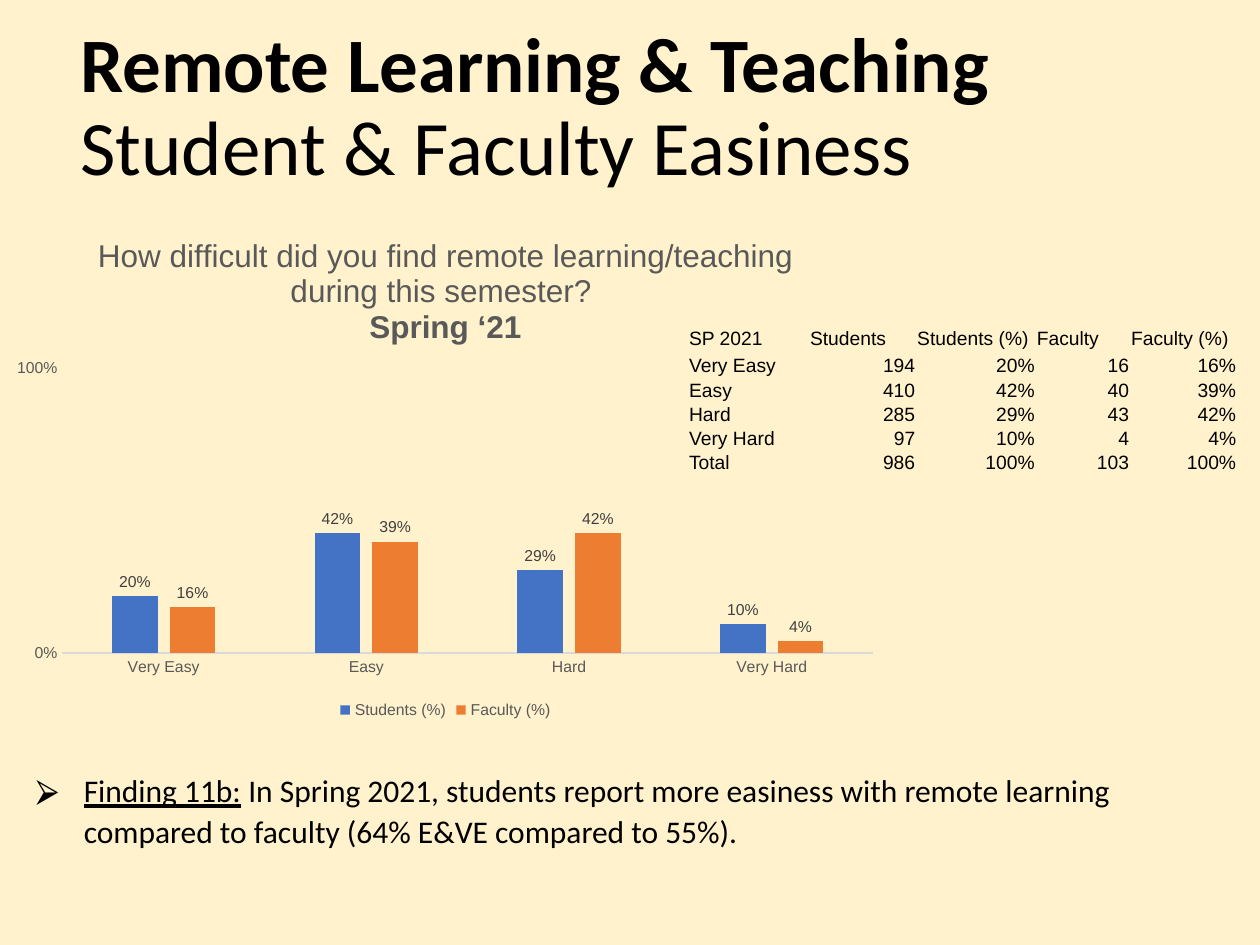
from lxml import etree
from pptx import Presentation
from pptx import util as u
from pptx.chart.data import CategoryChartData
from pptx.dml.color import RGBColor
from pptx.enum import chart as charts, text
from pptx.oxml import parse_xml
from pptx.oxml.ns import nsdecls, qn

CREAM = RGBColor(0xFF, 0xF2, 0xCC)
BLACK = RGBColor(0, 0, 0)
GREY = RGBColor(0x59, 0x59, 0x59)
DARK_GREY = RGBColor(0x40, 0x40, 0x40)
LIGHT_GREY = RGBColor(0xD9, 0xD9, 0xD9)
BLUE = RGBColor(0x44, 0x72, 0xC4)
ORANGE = RGBColor(0xED, 0x7D, 0x31)
NO_STYLE = "{2D5ABB26-0587-4C30-8999-92F81FD0307C}"


def style_font(font, name, size, color):
    font.name = name
    font.size = u.Pt(size)
    font.color.rgb = color


def add_text(left, top, width, height, line_spacing):
    text_frame = slide.shapes.add_textbox(
        u.Cm(left), u.Cm(top), u.Cm(width), u.Cm(height)).text_frame
    text_frame.word_wrap = True
    text_frame.paragraphs[0].line_spacing = line_spacing
    return text_frame


presentation = Presentation()
presentation.slide_width = u.Cm(25.4)
presentation.slide_height = u.Cm(19.05)
slide = presentation.slides.add_slide(presentation.slide_layouts[6])
slide.background.fill.solid()
slide.background.fill.fore_color.rgb = CREAM

finding = add_text(0.48, 15.37, 24.43, 3.28, 1.07)
paragraph = finding.paragraphs[0]
paragraph.text = "Finding 11b:"
paragraph.add_run().text = (
    " In Spring 2021, students report more easiness with remote learning "
    "compared to faculty (64% E&VE compared to 55%).")
for run in paragraph.runs:
    style_font(run.font, "Calibri", 18, BLACK)
paragraph.runs[0].font.underline = True
properties = paragraph._p.get_or_add_pPr()
properties.set("marL", str(u.Cm(0.96)))
properties.set("indent", str(-u.Cm(0.96)))
bullet_color = etree.SubElement(properties, qn("a:buClr"))
etree.SubElement(bullet_color, qn("a:srgbClr"), val=str(BLACK))
etree.SubElement(properties, qn("a:buFont"), typeface="Arial")
etree.SubElement(properties, qn("a:buChar"), char="⮚")

title = add_text(1.37, 0.36, 21.89, 3.68, 0.9)
title.vertical_anchor = text.MSO_ANCHOR.MIDDLE
paragraph = title.paragraphs[0]
paragraph.text = "Remote Learning & Teaching\vStudent & Faculty Easiness"
for run in paragraph.runs:
    style_font(run.font, "Calibri", 44, BLACK)
paragraph.runs[0].font.bold = True

data = CategoryChartData(number_format="0%")
data.categories = ["Very Easy", "Easy", "Hard", "Very Hard"]
data.add_series("Students (%)", [0.2, 0.42, 0.29, 0.1])
data.add_series("Faculty (%)", [0.16, 0.39, 0.42, 0.04])
chart = slide.shapes.add_chart(
    charts.XL_CHART_TYPE.COLUMN_CLUSTERED,
    u.Cm(0), u.Cm(4.34), u.Cm(17.96), u.Cm(10.26), data).chart
style_font(chart.font, "Arial", 10, BLACK)

chart_title = chart.chart_title.text_frame
chart_title.text = ("How difficult did you find remote learning/teaching "
                    "during this semester? \nSpring ‘21")
for paragraph, bold in zip(chart_title.paragraphs, (False, True)):
    style_font(paragraph.runs[0].font, "Arial", 18, GREY)
    paragraph.runs[0].font.bold = bold
chart.chart_title.include_in_layout = False

chart.has_legend = True
chart.legend.position = charts.XL_LEGEND_POSITION.BOTTOM
chart.legend.include_in_layout = False
style_font(chart.legend.font, "Arial", 9, GREY)

for axis in (chart.category_axis, chart.value_axis):
    axis.major_tick_mark = charts.XL_TICK_MARK.NONE
    axis.minor_tick_mark = charts.XL_TICK_MARK.NONE
    axis.has_major_gridlines = False
    style_font(axis.tick_labels.font, "Arial", 9, GREY)
chart.category_axis.format.line.color.rgb = LIGHT_GREY
chart.category_axis.format.line.width = u.Pt(0.75)
value_axis = chart.value_axis
value_axis.format.line.fill.background()
value_axis.minimum_scale = 0
value_axis.maximum_scale = 1
value_axis.major_unit = 1
value_axis.tick_labels.number_format = "0%"
value_axis.tick_labels.number_format_is_linked = False

plot = chart.plots[0]
plot.gap_width = 219
plot.overlap = -27
plot.vary_by_categories = False
for series, color in zip(plot.series, (BLUE, ORANGE)):
    series.format.fill.solid()
    series.format.fill.fore_color.rgb = color
    labels = series.data_labels
    labels.show_value = True
    labels.position = charts.XL_LABEL_POSITION.OUTSIDE_END
    labels.number_format = "0%"
    labels.number_format_is_linked = False
    style_font(labels.font, "Arial", 9, DARK_GREY)

plot_area = chart._chartSpace.chart.plotArea
for layout in plot_area.findall(qn("c:layout")):
    plot_area.remove(layout)
plot_area.insert(0, parse_xml(
    f'<c:layout {nsdecls("c")}><c:manualLayout><c:layoutTarget val="inner"/>'
    '<c:xMode val="edge"/><c:yMode val="edge"/><c:x val="0.07"/>'
    '<c:y val="0.3"/><c:w val="0.91"/><c:h val="0.56"/>'
    '</c:manualLayout></c:layout>'))

rows = [
    ("SP 2021", "Students", "Students (%)", "Faculty", "Faculty (%)"),
    ("Very Easy", "194", "20%", "16", "16%"),
    ("Easy", "410", "42%", "40", "39%"),
    ("Hard", "285", "29%", "43", "42%"),
    ("Very Hard", "97", "10%", "4", "4%"),
    ("Total", "986", "100%", "103", "100%"),
]
table = slide.shapes.add_table(
    len(rows), len(rows[0]),
    u.Cm(13.87), u.Cm(6.35), u.Cm(11.05), u.Cm(3.18)).table
table.first_row = False
table.horz_banding = False
table._tbl.tblPr.find(qn("a:tableStyleId")).text = NO_STYLE
for column, width in zip(table.columns, (2.44, 2.16, 2.41, 1.9, 2.16)):
    column.width = u.Cm(width)
for row, height in zip(table.rows, (0.69, 0.56, 0.41, 0.41, 0.43, 0.41)):
    row.height = u.Cm(height)
for row_index, values in enumerate(rows):
    for column_index, value in enumerate(values):
        cell = table.cell(row_index, column_index)
        cell.fill.background()
        cell.vertical_anchor = text.MSO_ANCHOR.BOTTOM
        cell.margin_left = cell.margin_right = cell.margin_top = u.Cm(0.02)
        cell.margin_bottom = 0
        paragraph = cell.text_frame.paragraphs[0]
        paragraph.text = value
        style_font(paragraph.runs[0].font, "Arial", 11, BLACK)
        if row_index and column_index:
            paragraph.alignment = text.PP_ALIGN.RIGHT

presentation.save("out.pptx")
